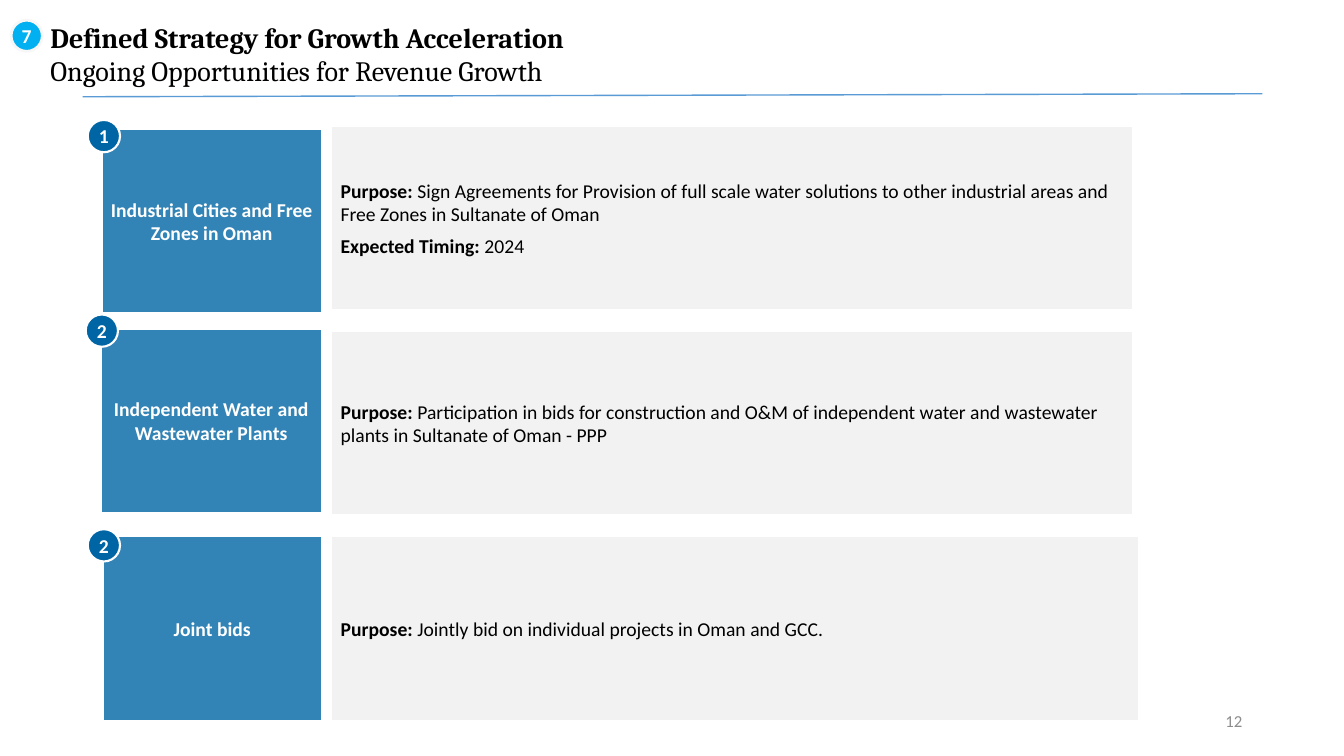
import pptx
import pptx.dml.color
import pptx.enum.shapes
import pptx.enum.text
import pptx.oxml.ns
import pptx.util
from collections import namedtuple
from lxml import etree

SHAPE = pptx.enum.shapes.MSO_SHAPE
ALIGN = pptx.enum.text.PP_ALIGN
ANCHOR = pptx.enum.text.MSO_ANCHOR

Box = namedtuple("Box", "left top width height")
Opportunity = namedtuple("Opportunity", "number topic details topic_box badge_at detail_width")

WIDTH = pptx.util.Inches(13.33)
HEIGHT = pptx.util.Inches(7.5)
COLUMN = WIDTH / 133.3
ROW = HEIGHT / 75
CARD_HEIGHT = 18.3
CARD_PITCH = 20.35
BADGE_SIZE = 3.2

OPPORTUNITIES = [
    Opportunity("1", "Industrial Cities and Free Zones in Oman",
                [("Purpose: ", "Sign Agreements for Provision of full scale water solutions "
                  "to other industrial areas and Free Zones in Sultanate of Oman"),
                 ("Expected Timing: ", "2024")],
                Box(1.4, 0.3, 21.8, CARD_HEIGHT), (0, -0.6), 79.6),
    Opportunity("2", "Independent Water and Wastewater Plants",
                [("Purpose: ", "Participation in bids for construction and O&M of independent "
                  "water and wastewater plants in Sultanate of Oman - PPP")],
                Box(1.3, -0.25, 21.9, CARD_HEIGHT), (-0.2, -1.65), 79.6),
    Opportunity("2", "Joint bids",
                [("Purpose: ", "Jointly bid on individual projects in Oman and GCC.")],
                Box(1.5, 0, 21.7, CARD_HEIGHT), (0, -0.7), 80.2),
]


def color(value):
    return pptx.dml.color.RGBColor.from_string(value)


def place(box):
    return (round(box.left * COLUMN), round(box.top * ROW),
            round(box.width * COLUMN), round(box.height * ROW))


def write(shape, paragraphs, size=14, font="Calibri", ink="FFFFFF", align=ALIGN.CENTER,
          anchor=ANCHOR.MIDDLE, insets=(0, 0, 0, 0), gap=0):
    frame = shape.text_frame
    frame.word_wrap = True
    frame.auto_size = pptx.enum.text.MSO_AUTO_SIZE.NONE
    frame.vertical_anchor = anchor
    (frame.margin_left, frame.margin_top,
     frame.margin_right, frame.margin_bottom) = map(pptx.util.Inches, insets)
    for index, runs in enumerate(paragraphs):
        paragraph = frame.add_paragraph() if index else frame.paragraphs[0]
        paragraph.alignment = align
        paragraph.space_before = pptx.util.Pt(gap if index else 0)
        for words, bold in runs:
            run = paragraph.add_run()
            run.text = words
            run.font.size = pptx.util.Pt(size)
            run.font.name = font
            run.font.bold = bold
            run.font.color.rgb = color(ink)


def add_panel(slide, kind, box, fill, outline="FFFFFF", weight=1.5):
    panel = slide.shapes.add_shape(kind, *place(box))
    panel.shadow.inherit = False
    panel.fill.solid()
    panel.fill.fore_color.rgb = color(fill)
    panel.line.color.rgb = color(outline)
    panel.line.width = pptx.util.Pt(weight)
    return panel


def add_heading(slide, box):
    rule = slide.shapes.add_connector(
        pptx.enum.shapes.MSO_CONNECTOR.STRAIGHT,
        round((box.left + 7.1) * COLUMN), round((box.top + 7.6) * ROW),
        round((box.left + 124.1) * COLUMN), round((box.top + 7.3) * ROW))
    rule.line.color.rgb = color("5B9BD5")
    rule.line.width = pptx.util.Pt(1)
    properties = rule._element.find(pptx.oxml.ns.qn("p:spPr"))
    etree.SubElement(properties, pptx.oxml.ns.qn("a:effectLst"))

    section = add_panel(slide, SHAPE.OVAL, Box(box.left, box.top, 3.1, 3.1),
                        "00B0F0", "F7F7F7", 2)
    write(section, [[("7", True)]])

    title = slide.shapes.title
    title.left, title.top, title.width, title.height = place(
        Box(box.left + 1.9, box.top, box.width - 1.9, box.height))
    write(title, [[("Defined Strategy for Growth Acceleration", True)],
                  [("Ongoing Opportunities for Revenue Growth", False)]],
          size=20, font="Cambria", ink="000000", align=ALIGN.LEFT,
          anchor=ANCHOR.TOP, insets=(0.2, 0, 0, 0))


def add_opportunity(slide, box, item):
    detail = add_panel(slide, SHAPE.RECTANGLE,
                       Box(box.left + 24.1, box.top, item.detail_width, box.height), "F2F2F2")
    write(detail, [[(label, True), (words, False)] for label, words in item.details],
          ink="000000", align=ALIGN.LEFT, insets=(0.1, 0.05, 0.1, 0.05), gap=6)

    offset = item.topic_box
    topic = add_panel(slide, SHAPE.RECTANGLE,
                      offset._replace(left=box.left + offset.left, top=box.top + offset.top),
                      "3384B6")
    write(topic, [[(item.topic, True)]], insets=(0.05,) * 4)

    across, down = item.badge_at
    badge = add_panel(slide, SHAPE.OVAL,
                      Box(box.left + across, box.top + down, BADGE_SIZE, BADGE_SIZE), "0065A4")
    write(badge, [[(item.number, True)]])


def add_page_number(slide, box):
    page_number = slide.shapes.add_textbox(*place(box))
    write(page_number, [[("12", False)]], size=12, ink="8C8C8C", align=ALIGN.RIGHT,
          insets=(0.1, 0.05, 0.1, 0.05))


def main():
    presentation = pptx.Presentation()
    presentation.slide_width = WIDTH
    presentation.slide_height = HEIGHT
    slide = presentation.slides.add_slide(presentation.slide_layouts.get_by_name("Title Only"))
    add_heading(slide, Box(1.1, 2, 106.8, 6.7))
    for index, item in enumerate(OPPORTUNITIES):
        add_opportunity(slide, Box(8.7, 12.5 + index * CARD_PITCH, 104.3, CARD_HEIGHT), item)
    add_page_number(slide, Box(94.2, 69.5, 30, 4))
    presentation.save("out.pptx")


if __name__ == "__main__":
    main()
